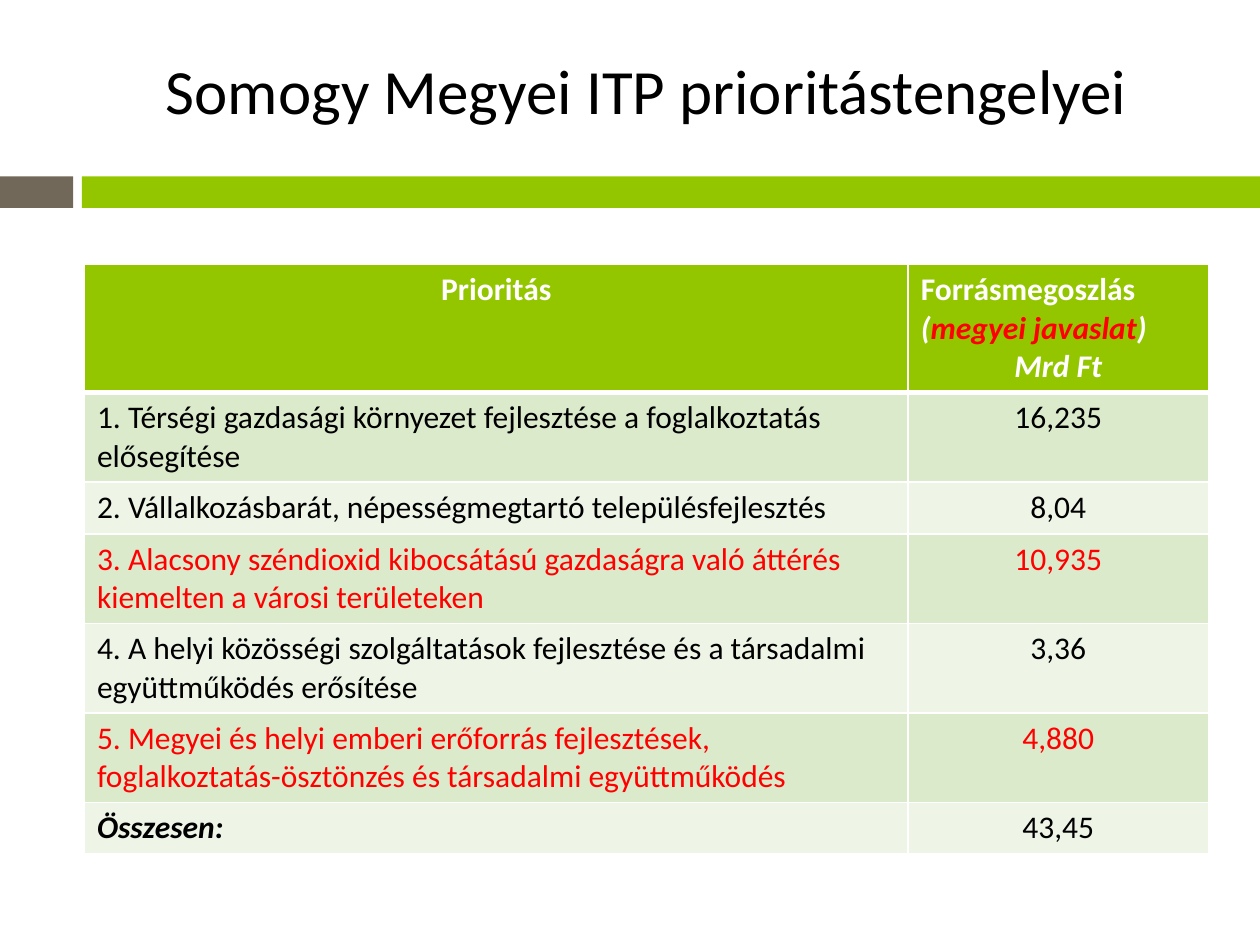
from dataclasses import dataclass

import pptx
import pptx.dml.color
import pptx.enum.shapes
import pptx.enum.text
import pptx.oxml
import pptx.oxml.ns
import pptx.util

WIDTH, HEIGHT = 10, 7.5
LEFT, CONTENT_WIDTH = 0.67, 8.92
COLUMN_SHARES = (0.733, 0.267)
ROW_HEIGHT = 0.41
FONT = "Calibri"
COLORS = {
    "black": "000000",
    "white": "FFFFFF",
    "red": "FF0000",
    "green": "94C600",
    "brown": "71685A",
    "odd": "DCEACC",
    "even": "EEF5E7",
}
CENTER = pptx.enum.text.PP_ALIGN.CENTER
LEFT_ALIGN = pptx.enum.text.PP_ALIGN.LEFT


@dataclass
class Run:
    text: str
    color: str = "black"
    bold: bool = False
    italic: bool = False
    size: float = 18


@dataclass
class Line:
    runs: list[Run]
    align: pptx.enum.text.PP_ALIGN = LEFT_ALIGN


@dataclass
class Priority:
    name: str
    amount: str
    color: str = "black"
    total: bool = False


PRIORITIES = [
    Priority("1. Térségi gazdasági környezet fejlesztése a foglalkoztatás elősegítése", "16,235"),
    Priority("2. Vállalkozásbarát, népességmegtartó településfejlesztés", "8,04"),
    Priority("3. Alacsony széndioxid kibocsátású gazdaságra való áttérés "
             "kiemelten a városi területeken", "10,935", "red"),
    Priority("4. A helyi közösségi szolgáltatások fejlesztése és a társadalmi "
             "együttműködés erősítése", "3,36"),
    Priority("5. Megyei és helyi emberi erőforrás fejlesztések, "
             "foglalkoztatás-ösztönzés és társadalmi együttműködés", "4,880", "red"),
    Priority("Összesen:", "43,45", total=True),
]
HEADINGS = [
    [Line([Run("Prioritás", "white", True)], CENTER)],
    [
        Line([
            Run("Forrásmegoszlás ", "white", True),
            Run("(", "white", True, True),
            Run("megyei javaslat", "red", True, True),
            Run(")", "white", True, True),
        ]),
        Line([Run("Mrd Ft", "white", True, True)], CENTER),
    ],
]


def rgb(name: str) -> pptx.dml.color.RGBColor:
    return pptx.dml.color.RGBColor.from_string(COLORS[name])


def write_lines(frame, lines: list[Line]) -> None:
    for index, line in enumerate(lines):
        paragraph = frame.add_paragraph() if index else frame.paragraphs[0]
        paragraph.alignment = line.align
        for part in line.runs:
            run = paragraph.add_run()
            run.text = part.text
            run.font.name = FONT
            run.font.size = pptx.util.Pt(part.size)
            run.font.bold = part.bold
            run.font.italic = part.italic
            run.font.color.rgb = rgb(part.color)


def add_band(slide, left: float, width: float, color: str) -> None:
    band = slide.shapes.add_shape(
        pptx.enum.shapes.MSO_SHAPE.RECTANGLE,
        *map(pptx.util.Inches, (left, 1.4, width, 0.25)))
    band.shadow.inherit = False
    band.fill.solid()
    band.fill.fore_color.rgb = rgb(color)
    band.line.fill.background()


def set_borders(cell, top: float, bottom: float) -> None:
    """Draw white cell borders; top and bottom are widths in points."""
    properties = cell._tc.get_or_add_tcPr()
    for side, points in (("L", 1), ("R", 1), ("T", top), ("B", bottom)):
        properties.append(pptx.oxml.parse_xml(
            f'<a:ln{side} {pptx.oxml.ns.nsdecls("a")} w="{pptx.util.Pt(points)}">'
            f'<a:solidFill><a:srgbClr val="{COLORS["white"]}"/></a:solidFill>'
            f'</a:ln{side}>'))


def priority_cells(priority: Priority) -> list[list[Line]]:
    name = Run(priority.name, priority.color, priority.total, priority.total)
    return [[Line([name])], [Line([Run(priority.amount, priority.color)], CENTER)]]


def add_priority_table(slide) -> None:
    rows = [HEADINGS] + [priority_cells(priority) for priority in PRIORITIES]
    table = slide.shapes.add_table(
        len(rows), len(COLUMN_SHARES),
        *map(pptx.util.Inches, (LEFT, 2.1, CONTENT_WIDTH, ROW_HEIGHT * len(rows)))).table
    for column, share in zip(table.columns, COLUMN_SHARES):
        column.width = pptx.util.Inches(CONTENT_WIDTH * share)
    for row_index, row in enumerate(rows):
        fill = "green" if row_index == 0 else ("even", "odd")[row_index % 2]
        for column_index, lines in enumerate(row):
            cell = table.cell(row_index, column_index)
            set_borders(cell, 3 if row_index == 1 else 1, 3 if row_index == 0 else 1)
            cell.fill.solid()
            cell.fill.fore_color.rgb = rgb(fill)
            write_lines(cell.text_frame, lines)


def add_title(slide) -> None:
    title = slide.shapes.title
    title.left, title.top, title.width, title.height = map(
        pptx.util.Inches, (LEFT, 0.27, CONTENT_WIDTH, 0.87))
    title.text_frame.vertical_anchor = pptx.enum.text.MSO_ANCHOR.MIDDLE
    write_lines(title.text_frame,
                [Line([Run("Somogy Megyei ITP prioritástengelyei", size=36)], CENTER)])


def main() -> None:
    deck = pptx.Presentation()
    deck.slide_width, deck.slide_height = map(pptx.util.Inches, (WIDTH, HEIGHT))
    slide = deck.slides.add_slide(deck.slide_layouts[5])
    add_band(slide, 0, 0.58, "brown")
    add_band(slide, 0.65, WIDTH - 0.65, "green")
    add_title(slide)
    add_priority_table(slide)
    deck.save("out.pptx")


if __name__ == "__main__":
    main()
